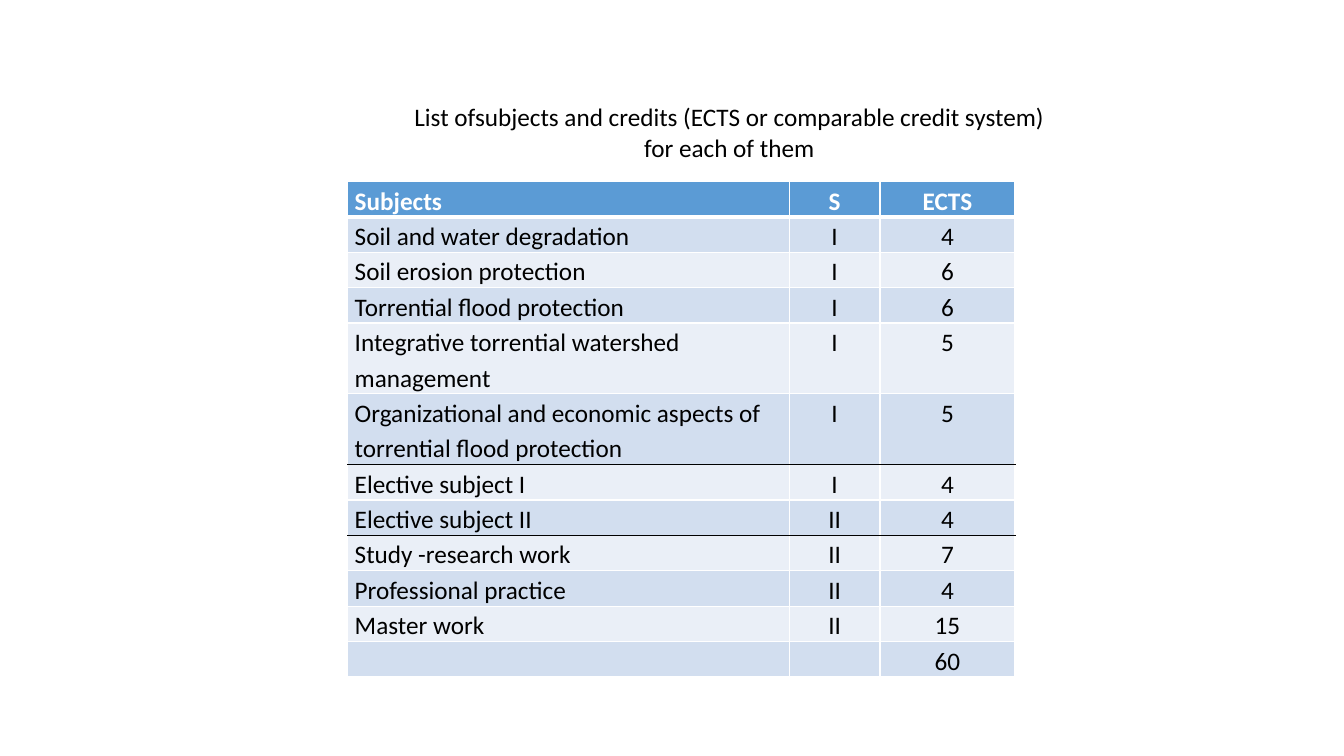
from dataclasses import dataclass

from lxml import etree
from pptx import Presentation
from pptx.dml.color import RGBColor
from pptx.enum import text
from pptx.oxml import ns
from pptx.util import Pt


@dataclass(frozen=True)
class Theme:
    font: str = "Calibri"
    size: float = 18
    ink: str = "000000"
    white: str = "FFFFFF"
    header: str = "5B9BD5"
    bands: tuple = ("D2DEEF", "EAEFF7")


THEME = Theme()

TITLE = "List ofsubjects and credits (ECTS or comparable credit system) for each of them"
SUBJECTS = [
    ("Subjects", "S", "ECTS"),
    ("Soil and water degradation", "I", "4"),
    ("Soil erosion protection", "I", "6"),
    ("Torrential flood protection", "I", "6"),
    ("Integrative torrential watershed management", "I", "5"),
    ("Organizational and economic aspects of torrential flood protection", "I", "5"),
    ("Elective subject I", "I", "4"),
    ("Elective subject II", "II", "4"),
    ("Study -research work", "II", "7"),
    ("Professional practice", "II", "4"),
    ("Master work", "II", "15"),
    ("", "", "60"),
]
COLUMN_WIDTHS = (315.36, 64.8, 96.48)
ROW_HEIGHT = 22.32
RULED_ROWS = (5, 7)  # rows closed by a dark line


def format_runs(para, color, bold=False):
    for span in para.runs:
        span.font.name = THEME.font
        span.font.size = Pt(THEME.size)
        span.font.bold = bold
        span.font.color.rgb = RGBColor.from_string(color)


def add_title(page):
    box = page.shapes.title
    box.left, box.top, box.width, box.height = Pt(280.8), Pt(69.12), Pt(480.24), Pt(51.12)
    frame = box.text_frame
    frame.text = TITLE
    frame.word_wrap = True
    frame.auto_size = text.MSO_AUTO_SIZE.NONE
    frame.vertical_anchor = text.MSO_ANCHOR.TOP
    para = frame.paragraphs[0]
    para.alignment = text.PP_ALIGN.CENTER
    format_runs(para, THEME.ink)


def add_border(cell, side, color, width):
    properties = cell._tc.get_or_add_tcPr()
    line = etree.SubElement(properties, ns.qn(f"a:ln{side}"), w=str(Pt(width)))
    fill = etree.SubElement(line, ns.qn("a:solidFill"))
    etree.SubElement(fill, ns.qn("a:srgbClr"), val=color)


def format_borders(cell, row):
    add_border(cell, "L", THEME.white, 1)
    add_border(cell, "R", THEME.white, 1)
    above, below = (THEME.ink if edge in RULED_ROWS else THEME.white
                    for edge in (row - 1, row))
    add_border(cell, "T", above, 3 if row == 1 else 1)
    add_border(cell, "B", below, 3 if row == 0 else 1)


def fill_cell(cell, row, column, content):
    is_header = row == 0
    # Borders come before the fill in the cell properties
    format_borders(cell, row)
    color = THEME.header if is_header else THEME.bands[(row - 1) % 2]
    cell.fill.solid()
    cell.fill.fore_color.rgb = RGBColor.from_string(color)
    cell.margin_left = cell.margin_right = Pt(5)
    cell.margin_top = cell.margin_bottom = Pt(0)
    # Text
    para = cell.text_frame.paragraphs[0]
    para.text = content
    para.line_spacing = 1.15
    para.alignment = text.PP_ALIGN.CENTER if column else text.PP_ALIGN.LEFT
    format_runs(para, THEME.white if is_header else THEME.ink, is_header)


def add_subject_table(page):
    table = page.shapes.add_table(
        len(SUBJECTS), len(COLUMN_WIDTHS), Pt(248.4), Pt(129.6),
        Pt(sum(COLUMN_WIDTHS)), Pt(ROW_HEIGHT * len(SUBJECTS))).table
    for column, width in zip(table.columns, COLUMN_WIDTHS):
        column.width = Pt(width)
    for row, contents in enumerate(SUBJECTS):
        table.rows[row].height = Pt(ROW_HEIGHT)
        for column, content in enumerate(contents):
            fill_cell(table.cell(row, column), row, column, content)


def main():
    deck = Presentation()
    deck.slide_width, deck.slide_height = Pt(960), Pt(540)
    page = deck.slides.add_slide(deck.slide_layouts[5])  # title only
    add_title(page)
    add_subject_table(page)
    deck.save("out.pptx")


if __name__ == "__main__":
    main()
